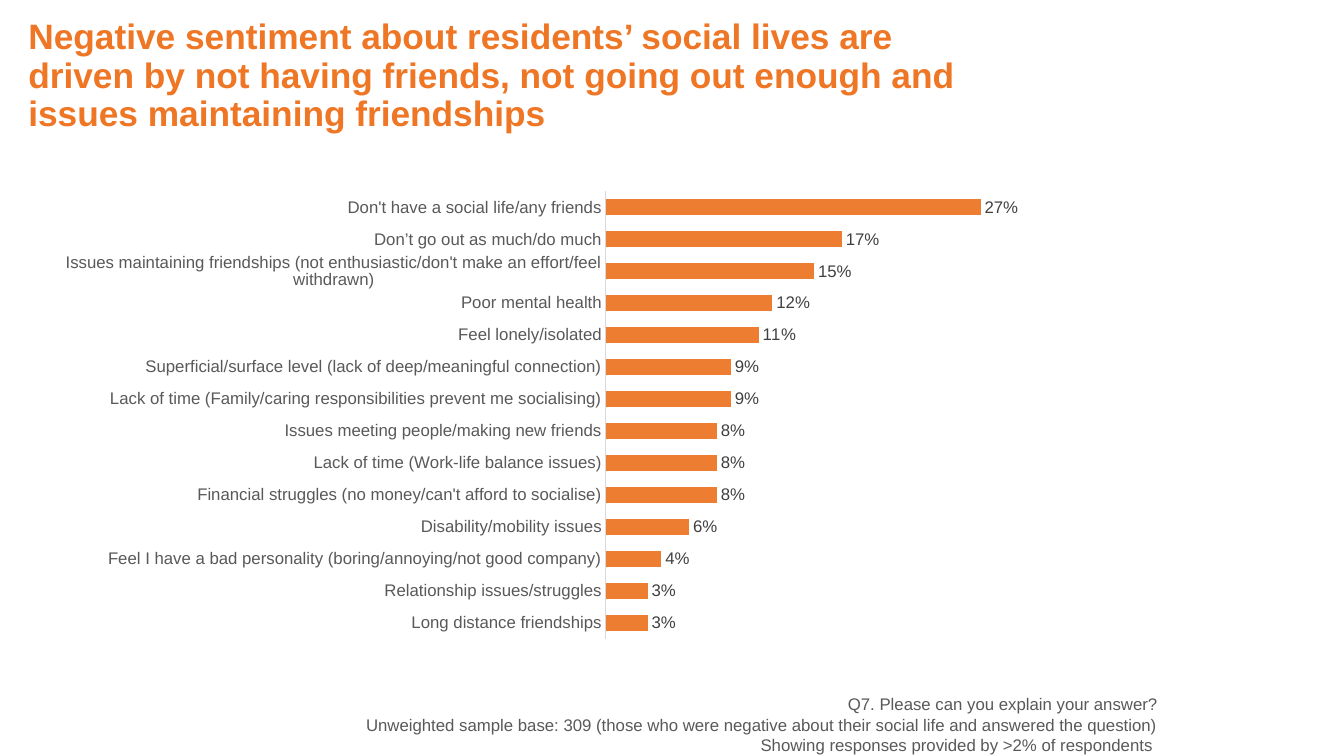
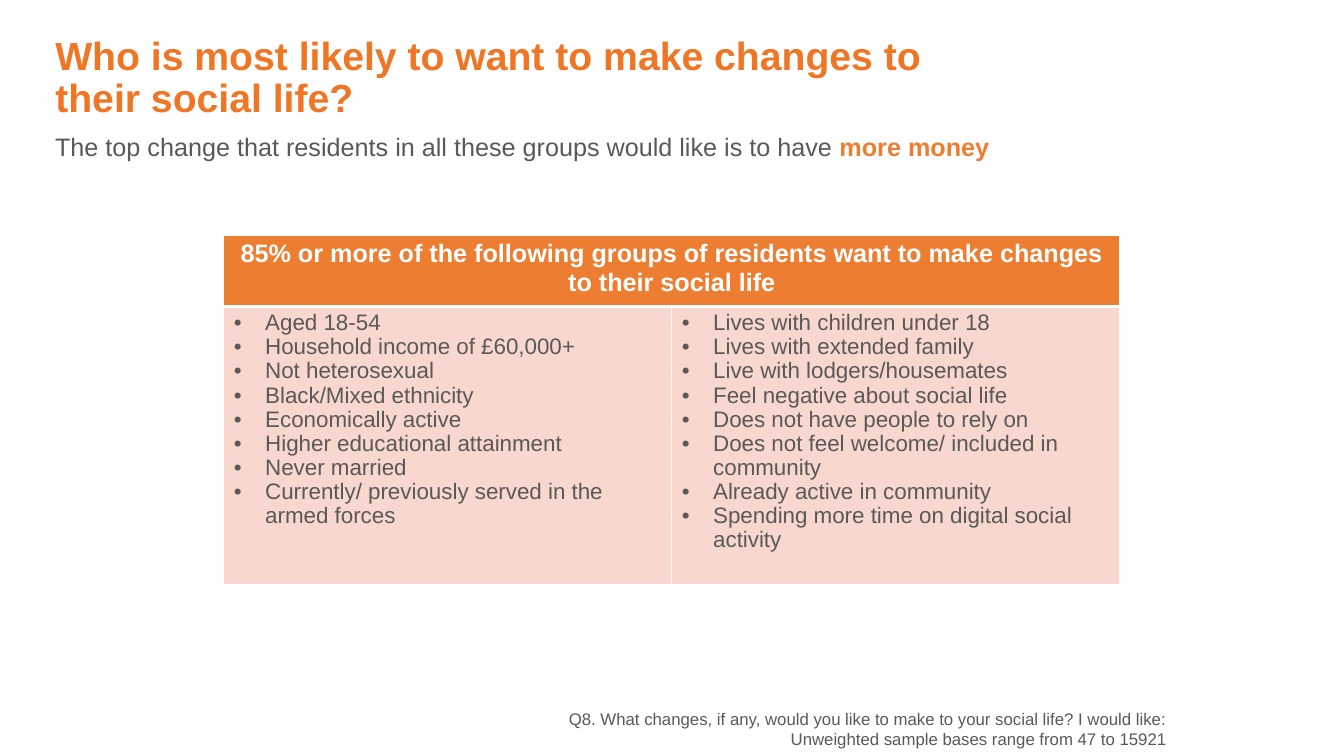
"""Build two survey slides: a bar chart of reasons and a table of groups."""
from lxml import etree
from pptx import Presentation
from pptx.chart.data import CategoryChartData as ChartData
from pptx.dml.color import RGBColor
from pptx.enum.chart import XL_CHART_TYPE as Kind, XL_LABEL_POSITION as Spot, XL_TICK_MARK as Tick
from pptx.enum.text import MSO_ANCHOR as Anchor, PP_ALIGN as Align
from pptx.oxml import parse_xml
from pptx.oxml.ns import nsdecls, qn
from pptx.util import Cm, Pt

TITLE, ORANGE, PINK = "EE7624", "ED7D31", "F8D7CE"
GREY, DARK, PALE, WHITE = "595959", "404040", "D9D9D9", "FFFFFF"


def hue(code):
    return RGBColor.from_string(code)


def style(font, size, code, bold=False):
    font.name, font.size, font.bold = "Arial", Pt(size), bold
    font.color.rgb = hue(code)


pages = [
    ("Negative sentiment about residents’ social lives are driven by not having friends, "
     "not going out enough and issues maintaining friendships",
     25.2, (0.46, 1.09, 24.59, 1.68),
     ["Q7. Please can you explain your answer?",
      "Unweighted sample base: 309 (those who were negative about their social life "
      "and answered the question)",
      "Showing responses provided by >2% of respondents "],
     (5.28, 17.48, 23.9, 1.55)),
    ("Who is most likely to want to make changes to their social life?",
     28, (1.14, 1.14, 23.95, 1.68),
     ["Q8. What changes, if any, would you like to make to your social life? I would like:",
      "Unweighted sample bases range from 47 to 15921"],
     (4.47, 17.86, 24.94, 1.02)),
]
reasons = [
    ("Don't have a social life/any friends", 0.27),
    ("Don’t go out as much/do much", 0.17),
    ("Issues maintaining friendships (not enthusiastic/don't make an effort/feel withdrawn)", 0.15),
    ("Poor mental health", 0.12),
    ("Feel lonely/isolated", 0.11),
    ("Superficial/surface level (lack of deep/meaningful connection)", 0.09),
    ("Lack of time (Family/caring responsibilities prevent me socialising)", 0.09),
    ("Issues meeting people/making new friends", 0.08),
    ("Lack of time (Work-life balance issues)", 0.08),
    ("Financial struggles (no money/can't afford to socialise)", 0.08),
    ("Disability/mobility issues", 0.06),
    ("Feel I have a bad personality (boring/annoying/not good company)", 0.04),
    ("Relationship issues/struggles", 0.03),
    ("Long distance friendships", 0.03),
]
groups = [
    ["Aged 18-54", "Household income of £60,000+", "Not heterosexual",
     "Black/Mixed ethnicity", "Economically active", "Higher educational attainment",
     "Never married", "Currently/ previously served in the armed forces"],
    ["Lives with children under 18", "Lives with extended family",
     "Live with lodgers/housemates", "Feel negative about social life",
     "Does not have people to rely on", "Does not feel welcome/ included in community",
     "Already active in community", "Spending more time on digital social activity"],
]

deck = Presentation()
deck.slide_width, deck.slide_height = Cm(33.87), Cm(19.05)

slides = []
for head, size, place, notes, foot in pages:
    slide = deck.slides.add_slide(deck.slide_layouts[5])
    slides.append(slide)
    title = slide.shapes.title
    title.left, title.top, title.width, title.height = map(Cm, place)
    frame = title.text_frame
    frame.text, frame.word_wrap, frame.vertical_anchor = head, True, Anchor.MIDDLE
    para = frame.paragraphs[0]
    para.alignment, para.line_spacing = Align.LEFT, 0.9
    style(para.runs[0].font, size, TITLE, True)

    frame = slide.shapes.add_textbox(*map(Cm, foot)).text_frame
    frame.text, frame.word_wrap, frame.vertical_anchor = "\n".join(notes), True, Anchor.MIDDLE
    frame.margin_left = frame.margin_right = frame.margin_top = frame.margin_bottom = 0
    for para in frame.paragraphs:
        para.alignment = Align.RIGHT
        style(para.runs[0].font, 12, GREY)

first, second = slides

data = ChartData(number_format="0%")
data.categories = [name for name, share in reasons]
data.add_series("Series 1", [share for name, share in reasons])
chart = first.shapes.add_chart(
    Kind.BAR_CLUSTERED, Cm(1.04), Cm(4.32), Cm(25.1), Cm(12.29), data).chart
chart.has_legend = chart.has_title = False
style(chart.font, 11, "000000")

axis = chart.category_axis
axis.reverse_order = True
axis.major_tick_mark = axis.minor_tick_mark = Tick.NONE
axis.format.line.color.rgb, axis.format.line.width = hue(PALE), Pt(0.75)
style(axis.tick_labels.font, 12, GREY)
axis = chart.value_axis
axis.minimum_scale, axis.maximum_scale = 0, 0.3
axis.has_major_gridlines = axis.visible = False

plot = chart.plots[0]
plot.gap_width, plot.vary_by_categories = 100, False
fill = plot.series[0].format.fill
fill.solid()
fill.fore_color.rgb = hue(ORANGE)
plot.has_data_labels = True
labels = plot.data_labels
labels.show_value, labels.position = True, Spot.OUTSIDE_END
labels.number_format, labels.number_format_is_linked = "0%", False
style(labels.font, 12, DARK)

area = chart.element.find(".//" + qn("c:plotArea"))
for old in area.findall(qn("c:layout")):
    area.remove(old)
sides = "".join(f'<c:{tag} val="{val}"/>' for tag, val in [
    ("layoutTarget", "inner"), ("xMode", "edge"), ("yMode", "edge"),
    ("x", 0.567), ("y", 0.041), ("w", 0.418), ("h", 0.917)])
area.insert(0, parse_xml(
    f'<c:layout {nsdecls("c")}><c:manualLayout>{sides}</c:manualLayout></c:layout>'))

table = second.shapes.add_table(2, 2, Cm(5.64), Cm(5.92), Cm(22.58), Cm(8.81)).table
table.rows[0].height, table.rows[1].height = Cm(1.8), Cm(7.01)
top = table.cell(0, 0)
top.merge(table.cell(0, 1))
top.text_frame.text = ("85% or more of the following groups of residents want to make "
                       "changes to their social life")
para = top.text_frame.paragraphs[0]
para.alignment = Align.CENTER
style(para.runs[0].font, 18, WHITE, True)

for col, names in enumerate(groups):
    frame = table.cell(1, col).text_frame
    frame.text = "\n".join(names)
    for para in frame.paragraphs:
        para.line_spacing = 0.97
        props = para._p.get_or_add_pPr()
        props.set("marL", str(Cm(0.79)))
        props.set("indent", str(-Cm(0.79)))
        etree.SubElement(props, qn("a:buFont"), typeface="Arial")
        etree.SubElement(props, qn("a:buChar"), char="•")
        style(para.runs[0].font, 16, GREY)

for row, (tone, edges) in enumerate([
        (ORANGE, {"L": 1, "R": 1, "T": 1, "B": 3}),
        (PINK, {"L": 1, "R": 1, "T": 3, "B": 1})]):
    for cell in table.rows[row].cells:
        cell.fill.solid()
        cell.fill.fore_color.rgb = hue(tone)
        props = cell._tc.get_or_add_tcPr()
        for spot, (side, width) in enumerate(edges.items()):
            props.insert(spot, parse_xml(
                f'<a:ln{side} {nsdecls("a")} w="{Pt(width)}"><a:solidFill>'
                f'<a:srgbClr val="{WHITE}"/></a:solidFill></a:ln{side}>'))

frame = second.shapes.add_textbox(Cm(1.14), Cm(3.18), Cm(26.24), Cm(1.02)).text_frame
frame.word_wrap = True
para = frame.paragraphs[0]
for words, tone, bold in [
        ("The top change that residents in all these groups would like is to have ", GREY, False),
        ("more money", ORANGE, True)]:
    run = para.add_run()
    run.text = words
    style(run.font, 18, tone, bold)

deck.save("out.pptx")
